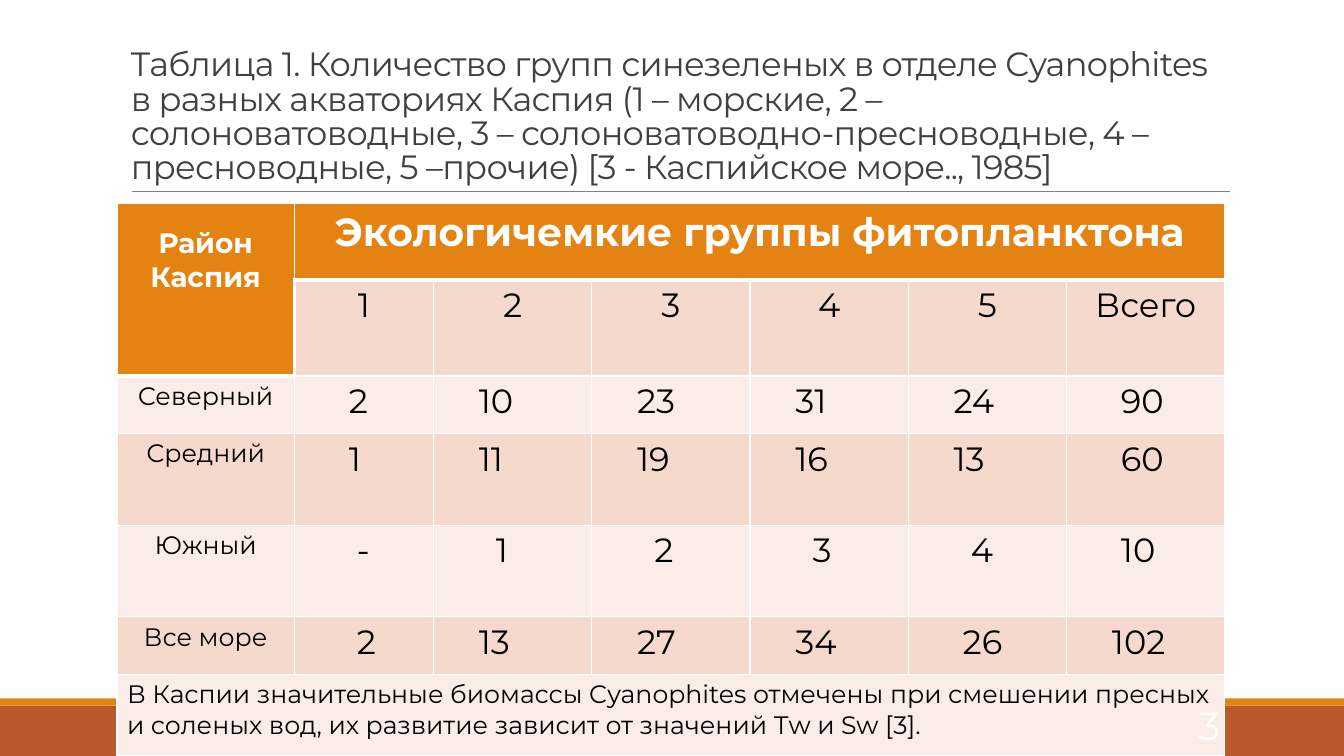
from dataclasses import dataclass

from lxml.etree import SubElement
from pptx import Presentation
from pptx.dml.color import RGBColor
from pptx.enum.shapes import MSO_CONNECTOR, MSO_SHAPE
from pptx.enum.text import MSO_ANCHOR, PP_ALIGN
from pptx.oxml.ns import qn
from pptx.util import Inches, Pt


@dataclass(frozen=True)
class Theme:
    """Colours, font and type sizes of the slide."""
    font: str = "Montserrat"
    orange: str = "E48312"
    rust: str = "BD582C"
    rule: str = "808080"
    title_ink: str = "404040"
    ink: str = "000000"
    white: str = "FFFFFF"
    dark_band: str = "F5D9CC"
    light_band: str = "FAEDE7"
    label: int = 18
    region: int = 20
    body: int = 24
    large: int = 28


class SlideBuilder:
    """Adds styled elements to the current slide."""

    def __init__(self, slide, theme):
        self.slide = slide
        self.theme = theme

    def style(self, paragraph, size, color, bold=False, align=PP_ALIGN.LEFT):
        """Format a paragraph and its runs."""
        paragraph.alignment = align
        for run in paragraph.runs:
            run.font.name = self.theme.font
            run.font.size = Pt(size)
            run.font.bold = bold
            run.font.color.rgb = RGBColor.from_string(color)

    def bar(self, top, height, color):
        """Add a full-width band."""
        shape = self.slide.shapes.add_shape(
            MSO_SHAPE.RECTANGLE, 0, Inches(top), Inches(13.33), Inches(height))
        shape.shadow.inherit = False
        shape.fill.solid()
        shape.fill.fore_color.rgb = RGBColor.from_string(color)
        shape.line.fill.background()

    def rule(self, left, right, top):
        """Add a thin horizontal line."""
        connector = self.slide.shapes.add_connector(
            MSO_CONNECTOR.STRAIGHT, Inches(left), Inches(top), Inches(right), Inches(top))
        connector.line.color.rgb = RGBColor.from_string(self.theme.rule)
        connector.line.width = Pt(0.5)
        SubElement(connector.element.spPr, qn("a:effectLst"))

    def text(self, text, box, size, color, anchor, align=PP_ALIGN.LEFT):
        """Add a wrapped text box and return its paragraph."""
        shape = self.slide.shapes.add_textbox(*map(Inches, box))
        frame = shape.text_frame
        frame.word_wrap = True
        frame.vertical_anchor = anchor
        frame.text = text
        paragraph = frame.paragraphs[0]
        self.style(paragraph, size, color, align=align)
        return paragraph

    def title(self, text, box):
        """Add the tightly set heading."""
        paragraph = self.text(text, box, self.theme.body, self.theme.title_ink, MSO_ANCHOR.BOTTOM)
        paragraph.line_spacing = 0.85
        paragraph.runs[0].font._element.set("spc", "-50")

    def table(self, left, top, columns, rows):
        """Add an unstyled table with the given column widths and row heights."""
        frame = self.slide.shapes.add_table(
            len(rows), len(columns), Inches(left), Inches(top),
            Inches(sum(columns)), Inches(sum(rows)))
        table = frame.table
        table.first_row = table.horz_banding = False
        for column, width in zip(table.columns, columns):
            column.width = Inches(width)
        for row, height in zip(table.rows, rows):
            row.height = Inches(height)
        return table

    def paint(self, cell, fill, heavy=()):
        """Give a cell white borders, heavy on the named sides, and a fill."""
        properties = cell._tc.get_or_add_tcPr()
        for side in "LRTB":
            width = Pt(3 if side in heavy else 1)
            line = SubElement(properties, qn(f"a:ln{side}"), w=str(width))
            solid = SubElement(line, qn("a:solidFill"))
            SubElement(solid, qn("a:srgbClr"), val=self.theme.white)
        cell.fill.solid()
        cell.fill.fore_color.rgb = RGBColor.from_string(fill)

    def label(self, cell, text, size, color, bold=False, align=PP_ALIGN.CENTER, indent=0):
        """Put text in a cell, indented from the left by a length in inches."""
        cell.text_frame.text = text
        cell.margin_left = Inches(0.1 + indent)
        for paragraph in cell.text_frame.paragraphs:
            self.style(paragraph, size, color, bold, align)


TITLE = ("Tаблица 1. Количество групп синезеленых в отделе Cyanophites в разных акваториях "
         "Каспия (1 – морские, 2 – солоноватоводные, 3 – солоноватоводно-пресноводные, "
         "4 – пресноводные, 5 –прочие) [3 - Каспийское море.., 1985]")
NOTE = ("В Каспии значительные биомассы Cyanophites отмечены при смешении пресных и соленых вод, "
        "их развитие зависит от значений Тw и Sw [3].")
GROUPS = ["1", "2", "3", "4", "5", "Всего"]
NARROW, MIDDLE, WIDE = 0.35, 0.44, 0.52
REGIONS = [
    ("Северный", ["2", "10", "23", "31", "24", "90"], [MIDDLE] + [NARROW] * 4 + [MIDDLE]),
    ("Средний", ["1", "11", "19", "16", "13", "60"], [MIDDLE] + [NARROW] * 4 + [MIDDLE]),
    ("Южный", ["-", "1", "2", "3", "4", "10"], [WIDE] * 5 + [MIDDLE]),
    ("Все море", ["2", "13", "27", "34", "26", "102"], [WIDE] + [NARROW] * 3 + [MIDDLE, NARROW]),
]
COLUMNS = [1.76, 1.38] + [1.57] * 5
ROWS = [0.76, 0.95, 0.57, 0.91, 0.91, 0.57, 0.81]


def add_plankton_table(builder):
    """Add the table of ecological groups by region."""
    theme = builder.theme
    table = builder.table(1.16, 2.02, COLUMNS, ROWS)
    for row in range(len(ROWS)):
        for column in range(len(COLUMNS)):
            header = row == 0 or (row == 1 and column == 0)
            band = theme.dark_band if row % 2 else theme.light_band
            heavy = set()
            if header:
                heavy.add("B")
            if (row == 1 and column) or (row == 2 and column == 0):
                heavy.add("T")
            if row == 1 and column == 1:
                heavy.add("L")
            builder.paint(table.cell(row, column), theme.orange if header else band, heavy)

    region = table.cell(0, 0)
    region.merge(table.cell(1, 0))
    builder.label(region, "Район\nКаспия", theme.region, theme.white, bold=True)
    first = region.text_frame.paragraphs[0]
    first.line_spacing = 1.5
    first.space_before = Pt(6)
    heading = table.cell(0, 1)
    heading.merge(table.cell(0, 6))
    builder.label(heading, "Экологичемкие группы фитопланктона", theme.large, theme.white, bold=True)

    for column, group in enumerate(GROUPS, 1):
        builder.label(table.cell(1, column), group, theme.body, theme.ink)
    for row, (name, values, indents) in enumerate(REGIONS, 2):
        builder.label(table.cell(row, 0), name, theme.label, theme.ink)
        for column, (value, indent) in enumerate(zip(values, indents), 1):
            builder.label(table.cell(row, column), value, theme.body, theme.ink,
                          align=PP_ALIGN.LEFT, indent=indent)

    note = table.cell(6, 0)
    note.merge(table.cell(6, 6))
    builder.label(note, NOTE, theme.label, theme.ink, align=PP_ALIGN.LEFT)


def main():
    """Build and save the slide."""
    presentation = Presentation()
    presentation.slide_width = Inches(13.33)
    presentation.slide_height = Inches(7.5)
    slide = presentation.slides.add_slide(presentation.slide_layouts[6])
    theme = Theme()
    builder = SlideBuilder(slide, theme)
    builder.bar(7, 0.5, theme.rust)
    builder.bar(6.93, 0.07, theme.orange)
    builder.rule(1.31, 12.2, 1.9)
    builder.title(TITLE, (1.2, 0.31, 11, 1.59))
    add_plankton_table(builder)
    builder.text("3", (10.77, 6.99, 1.43, 0.4), theme.large, theme.white,
                 MSO_ANCHOR.MIDDLE, PP_ALIGN.RIGHT)
    presentation.save("out.pptx")


if __name__ == "__main__":
    main()
